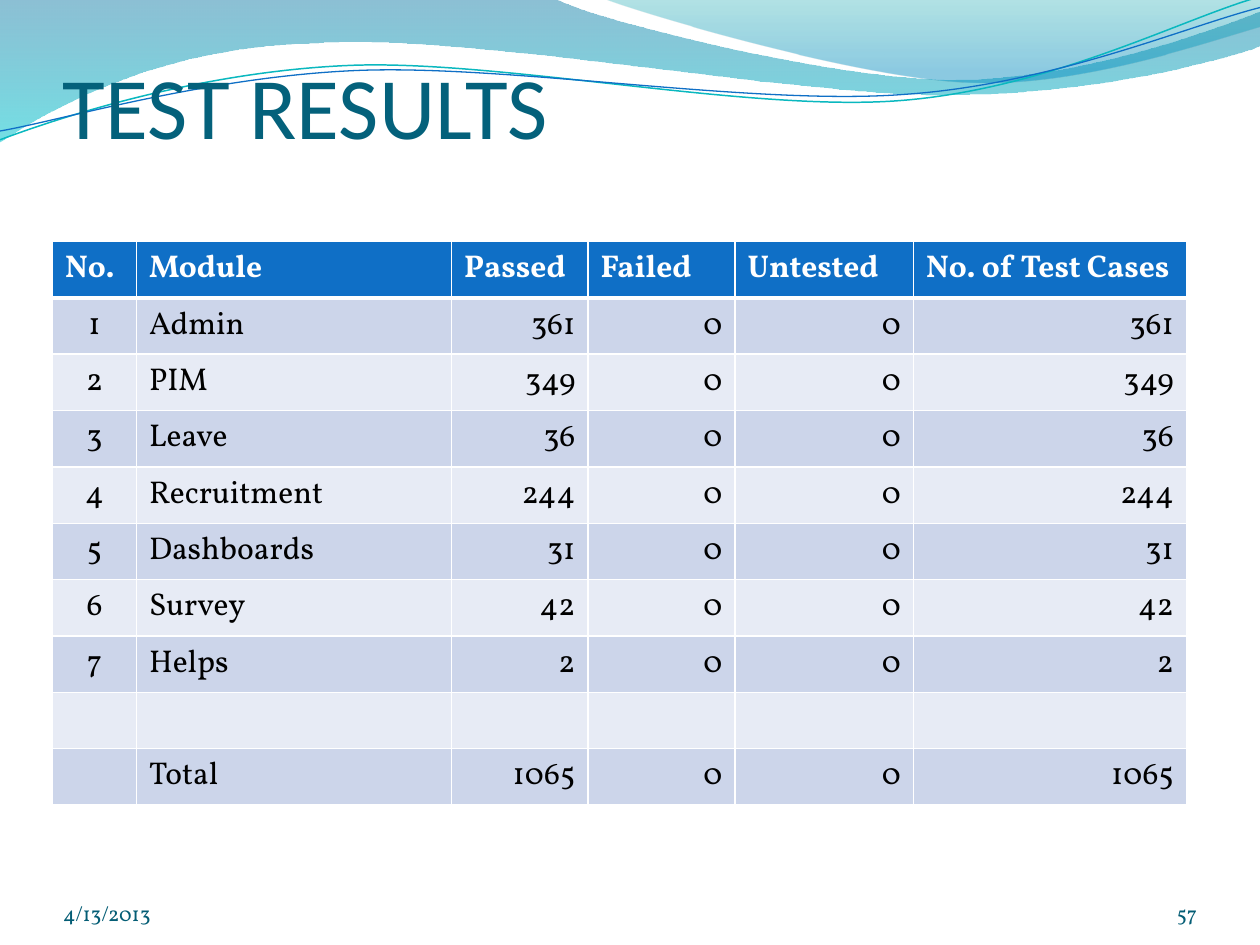
from dataclasses import dataclass

from lxml import etree
from pptx import Presentation, util as u
from pptx.dml.color import RGBColor
from pptx.enum import text
from pptx.oxml import ns


@dataclass(frozen=True)
class Theme:
    heading_font: str = "Calibri"
    body_font: str = "Vollkorn"
    title_size: int = 50
    table_size: int = 18
    footer_size: int = 12
    title: str = "04617B"
    footer: str = "045D75"
    header: str = "0F6FC6"
    bands: tuple = ("CCD5EA", "E7EBF5")
    ink: str = "000000"
    white: str = "FFFFFF"
    teal_line: str = "0AB8BF"
    # Gradient stops: position, colour, opacity in percent
    wide_wave: tuple = ((0, "0074A1", 45), (1, "00C6CF", 55))
    right_wave: tuple = ((0, "00A1A9", 30), (0.8, "008BBF", 45))


THEME = Theme()
COLUMNS, ROWS = 120, 90  # layout grid, twelve units to the inch
UNIT = u.Inches(10) / COLUMNS
ROW_HEIGHT = 5.37
COLUMN_WIDTHS = (8, 30, 13, 14, 17, 26)
LEFT, CENTER, RIGHT = text.PP_ALIGN.LEFT, text.PP_ALIGN.CENTER, text.PP_ALIGN.RIGHT
ALIGNMENTS = (CENTER, LEFT, RIGHT, RIGHT, RIGHT, RIGHT)

HEADINGS = ("No.", "Module", "Passed", "Failed", "Untested", "No. of Test Cases")
PASSED = {"Admin": 361, "PIM": 349, "Leave": 36, "Recruitment": 244,
          "Dashboards": 31, "Survey": 42, "Helps": 2}

# Outlines on a one-inch grid: a pair is a straight step, six numbers a Bézier curve
WIDE_WAVE = ((0, 0), (4.4, -0.01), (4.76, 0.17, 6.64, 0.63, 7.58, 0.63),
             (8.53, 0.63, 9.58, 0.26, 10, 0.09), (10.01, 0.36),
             (9.83, 0.44, 8.7, 0.76, 7.46, 0.75),
             (6.22, 0.75, 3.82, 0.28, 2.57, 0.34),
             (1.29, 0.36, 0.46, 0.83, -0.01, 1.13), (0, 0))
RIGHT_WAVE = ((4.79, -0.01), (5.09, 0.11, 6.82, 0.62, 7.69, 0.65),
              (8.56, 0.69, 9.61, 0.32, 10, 0.21), (10, 0), (4.79, -0.01))
TEAL_CURVE = ((0, 1.11), (0.48, 0.93, 1.58, 0.57, 2.77, 0.52),
              (3.95, 0.47, 5.93, 0.89, 7.13, 0.8),
              (8.33, 0.71, 9.38, 0.15, 9.98, -0.02))
BLUE_CURVE = ((0, 1.04), (0.47, 0.96, 1.64, 0.61, 2.83, 0.56),
              (4.03, 0.51, 5.97, 0.84, 7.17, 0.75),
              (8.36, 0.67, 9.41, 0.21, 10, 0.06))


def rgb(color):
    return RGBColor.from_string(color)


def grid(*lengths):
    return [u.Emu(round(length * UNIT)) for length in lengths]


def add_outline(page, outline, close):
    """Lay every point as a straight step, then join each three of a curve into one."""
    first, *others = [(u.Inches(step[i]), u.Inches(step[i + 1]))
                      for step in outline for i in range(0, len(step), 2)]
    builder = page.shapes.build_freeform(*first)
    builder.add_line_segments(others, close=close)
    shape = builder.convert_to_shape()
    shape.shadow.inherit = False
    segments = iter(list(shape._element.spPr.iter(ns.qn("a:lnTo"))))
    for step in outline[1:]:
        segment = next(segments)
        if len(step) == 6:
            curve = etree.Element(ns.qn("a:cubicBezTo"))
            segment.addprevious(curve)
            for part in (segment, next(segments), next(segments)):
                curve.append(part[0])
                part.getparent().remove(part)
    return shape


def add_wave(page, outline, stops):
    shape = add_outline(page, outline, close=True)
    shape.line.fill.background()
    shape.fill.gradient()
    shape.fill.gradient_angle = 270
    for stop, (position, color, opacity) in zip(shape.fill.gradient_stops, stops):
        stop.position = position
        stop.color.rgb = rgb(color)
    elements = shape._element.spPr.iter(ns.qn("a:srgbClr"))
    for element, (position, color, opacity) in zip(elements, stops):
        etree.SubElement(element, ns.qn("a:alpha"), val=str(opacity * 1000))


def add_curve(page, outline, color, width):
    shape = add_outline(page, outline, close=False)
    shape.fill.background()
    shape.line.color.rgb = rgb(color)
    shape.line.width = u.Pt(width)


def add_span(para, words, font, size, color, bold=False):
    span = para.add_run()
    span.text = words
    span.font.name = font
    span.font.size = u.Pt(size)
    span.font.bold = bold
    span.font.color.rgb = rgb(color)


def add_label(page, place, words, font, size, color, align=LEFT, top_inset=0):
    box = page.shapes.add_textbox(*grid(*place))
    frame = box.text_frame
    frame.word_wrap = True
    frame.vertical_anchor = text.MSO_ANCHOR.BOTTOM
    frame.margin_left = frame.margin_right = frame.margin_bottom = 0
    frame.margin_top = u.Inches(top_inset)
    para = frame.paragraphs[0]
    para.alignment = align
    add_span(para, words, font, size, color)


def add_border(cell, side, width):
    line = etree.SubElement(cell._tc.get_or_add_tcPr(), ns.qn(f"a:ln{side}"),
                            w=str(u.Pt(width)))
    fill = etree.SubElement(line, ns.qn("a:solidFill"))
    etree.SubElement(fill, ns.qn("a:srgbClr"), val=THEME.white)


def fill_cell(cell, words, row, align):
    header = row == 0
    for side in "LRTB":
        under_header = (row, side) in ((0, "B"), (1, "T"))
        add_border(cell, side, 3 if under_header else 1)
    cell.fill.solid()
    cell.fill.fore_color.rgb = rgb(THEME.header if header else THEME.bands[(row - 1) % 2])
    if words:
        para = cell.text_frame.paragraphs[0]
        para.alignment = LEFT if header else align
        add_span(para, words, THEME.body_font, THEME.table_size,
                 THEME.white if header else THEME.ink, bold=header)


def result_rows():
    total = sum(PASSED.values())
    modules = [(number, name, count, 0, 0, count)
               for number, (name, count) in enumerate(PASSED.items(), 1)]
    return [HEADINGS, *modules, ("",) * len(HEADINGS), ("", "Total", total, 0, 0, total)]


def add_results(page, left, top):
    rows = result_rows()
    place = grid(left, top, sum(COLUMN_WIDTHS), ROW_HEIGHT * len(rows))
    table = page.shapes.add_table(len(rows), len(HEADINGS), *place).table
    table.horz_banding = False
    for column, width in zip(table.columns, grid(*COLUMN_WIDTHS)):
        column.width = width
    for row, values in enumerate(rows):
        table.rows[row].height = grid(ROW_HEIGHT)[0]
        for column, value in enumerate(values):
            fill_cell(table.cell(row, column), str(value), row, ALIGNMENTS[column])


def main():
    deck = Presentation()
    deck.slide_width, deck.slide_height = grid(COLUMNS, ROWS)
    page = deck.slides.add_slide(deck.slide_layouts[6])
    add_wave(page, WIDE_WAVE, THEME.wide_wave)
    add_wave(page, RIGHT_WAVE, THEME.right_wave)
    add_curve(page, TEAL_CURVE, THEME.teal_line, 0.85)
    add_curve(page, BLUE_CURVE, THEME.header, 0.75)
    add_label(page, (6, 3, 108, 12), "TEST RESULTS", THEME.heading_font,
              THEME.title_size, THEME.title, top_inset=0.05)
    add_results(page, 5, 23)
    footer = (THEME.body_font, THEME.footer_size, THEME.footer)
    add_label(page, (6, 83.4, 28, 4.8), "4/13/2013", *footer)
    add_label(page, (104, 83.4, 10, 4.8), "57", *footer, align=RIGHT)
    deck.save("out.pptx")


if __name__ == "__main__":
    main()
